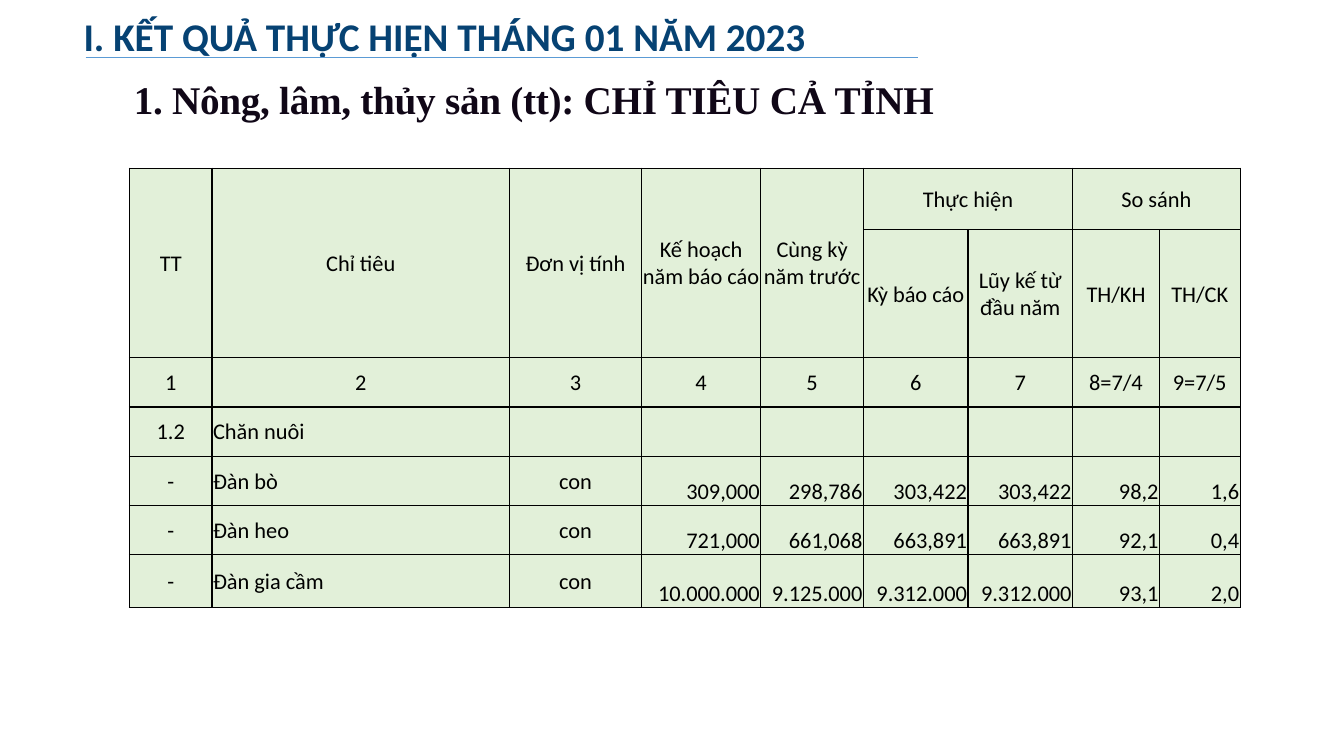
"""Build the slide on livestock results for January 2023."""
from lxml.etree import SubElement
from pptx import Presentation
from pptx.dml.color import RGBColor
from pptx.enum.shapes import MSO_CONNECTOR as Connector
from pptx.enum.text import MSO_ANCHOR as Anchor, MSO_AUTO_SIZE as AutoSize, PP_ALIGN as Align
from pptx.oxml.ns import qn
from pptx.util import Pt

NAVY = RGBColor(0x06, 0x42, 0x73)
INK = RGBColor(0x10, 0x07, 0x17)
BLUE = RGBColor(0x5B, 0x9B, 0xD5)
BLACK = RGBColor(0, 0, 0)
PALE_GREEN = RGBColor(0xE2, 0xF0, 0xD9)

COLUMN_WIDTHS = [59, 212.4, 94.3, 85.3, 73.3, 74.7, 74.7, 62.1, 57.6]
ROW_HEIGHTS = [44, 91.4, 35.2, 35.2, 35.2, 35.2, 37.7]
ROWS = [
    ["TT", "Chỉ tiêu", "Đơn vị tính", "Kế hoạch năm báo cáo", "Cùng kỳ năm trước",
     "Thực hiện", "", "So sánh", ""],
    ["", "", "", "", "", "Kỳ báo cáo", "Lũy kế từ đầu năm", "TH/KH", "TH/CK"],
    ["1", "2", "3", "4", "5", "6", "7", "8=7/4", "9=7/5"],
    ["1.2", "Chăn nuôi", "", "", "", "", "", "", ""],
    ["-", "Đàn bò", "con", "309,000", "298,786", "303,422", "303,422", "98,2", "1,6"],
    ["-", "Đàn heo", "con", "721,000", "661,068", "663,891", "663,891", "92,1", "0,4"],
    ["-", "Đàn gia cầm", "con", "10.000.000", "9.125.000", "9.312.000", "9.312.000",
     "93,1", "2,0"],
]
HEADER_ROWS = 3


def style_font(font, name, size, color, bold=False):
    font.name = name
    font.size = Pt(size)
    font.bold = bold
    font.color.rgb = color


def add_borders(cell):
    properties = cell._tc.get_or_add_tcPr()
    for index, side in enumerate(("lnL", "lnR", "lnT", "lnB")):
        line = properties.makeelement(qn(f"a:{side}"), {"w": str(Pt(1))})
        fill = SubElement(line, qn("a:solidFill"))
        SubElement(fill, qn("a:srgbClr"), val=str(BLACK))
        properties.insert(index, line)


deck = Presentation()
deck.slide_width = Pt(960)
deck.slide_height = Pt(540)
page = deck.slides.add_slide(deck.slide_layouts[6])

heading = page.shapes.add_textbox(Pt(52.6), Pt(3.6), Pt(885.6), Pt(44.6)).text_frame
heading.word_wrap = True
heading.vertical_anchor = Anchor.MIDDLE
heading.text = "I. KẾT QUẢ THỰC HIỆN THÁNG 01 NĂM 2023"
style_font(heading.paragraphs[0].font, "Calibri", 28, NAVY, bold=True)

rule = page.shapes.add_connector(Connector.STRAIGHT, Pt(61.2), Pt(41), Pt(656), Pt(41))
rule.line.color.rgb = BLUE
rule.line.width = Pt(1)
SubElement(rule._element.spPr, qn("a:effectLst"))

subheading = page.shapes.add_textbox(Pt(87.8), Pt(50.4), Pt(593.3), Pt(41)).text_frame
subheading.word_wrap = False
subheading.auto_size = AutoSize.SHAPE_TO_FIT_TEXT
para = subheading.paragraphs[0]
para.space_before = Pt(3)
para._p.get_or_add_pPr().set("marL", str(Pt(0.72)))
style_font(para.font, "Times New Roman", 28, INK, bold=True)
span = para.add_run()
span.text = "1. Nông, lâm, thủy sản (tt): CHỈ TIÊU CẢ TỈNH"
span._r.get_or_add_rPr().set("spc", "-20")

table = page.shapes.add_table(
    len(ROWS), len(COLUMN_WIDTHS), Pt(92.5), Pt(120.2),
    Pt(sum(COLUMN_WIDTHS)), Pt(sum(ROW_HEIGHTS))).table
table.first_row = False
table.horz_banding = False
for column, width in zip(table.columns, COLUMN_WIDTHS):
    column.width = Pt(width)
for row, height in zip(table.rows, ROW_HEIGHTS):
    row.height = Pt(height)

for row_index, texts in enumerate(ROWS):
    for column_index, text in enumerate(texts):
        cell = table.cell(row_index, column_index)
        cell.fill.solid()
        cell.fill.fore_color.rgb = PALE_GREEN
        add_borders(cell)
        cell.margin_left = cell.margin_right = cell.margin_top = Pt(0.72)
        cell.margin_bottom = 0
        cell.vertical_anchor = Anchor.MIDDLE
        cell.text = text
        para = cell.text_frame.paragraphs[0]
        para.alignment = Align.CENTER
        style_font(para.font, "Calibri", 16, BLACK)
        if row_index >= HEADER_ROWS and column_index == 1:
            para.alignment = Align.LEFT
        elif row_index >= HEADER_ROWS and column_index > 2:
            para.alignment = Align.RIGHT
            cell.vertical_anchor = Anchor.BOTTOM

for column_index in range(5):
    table.cell(0, column_index).merge(table.cell(1, column_index))
for column_index in (5, 7):
    table.cell(0, column_index).merge(table.cell(0, column_index + 1))

deck.save("out.pptx")
